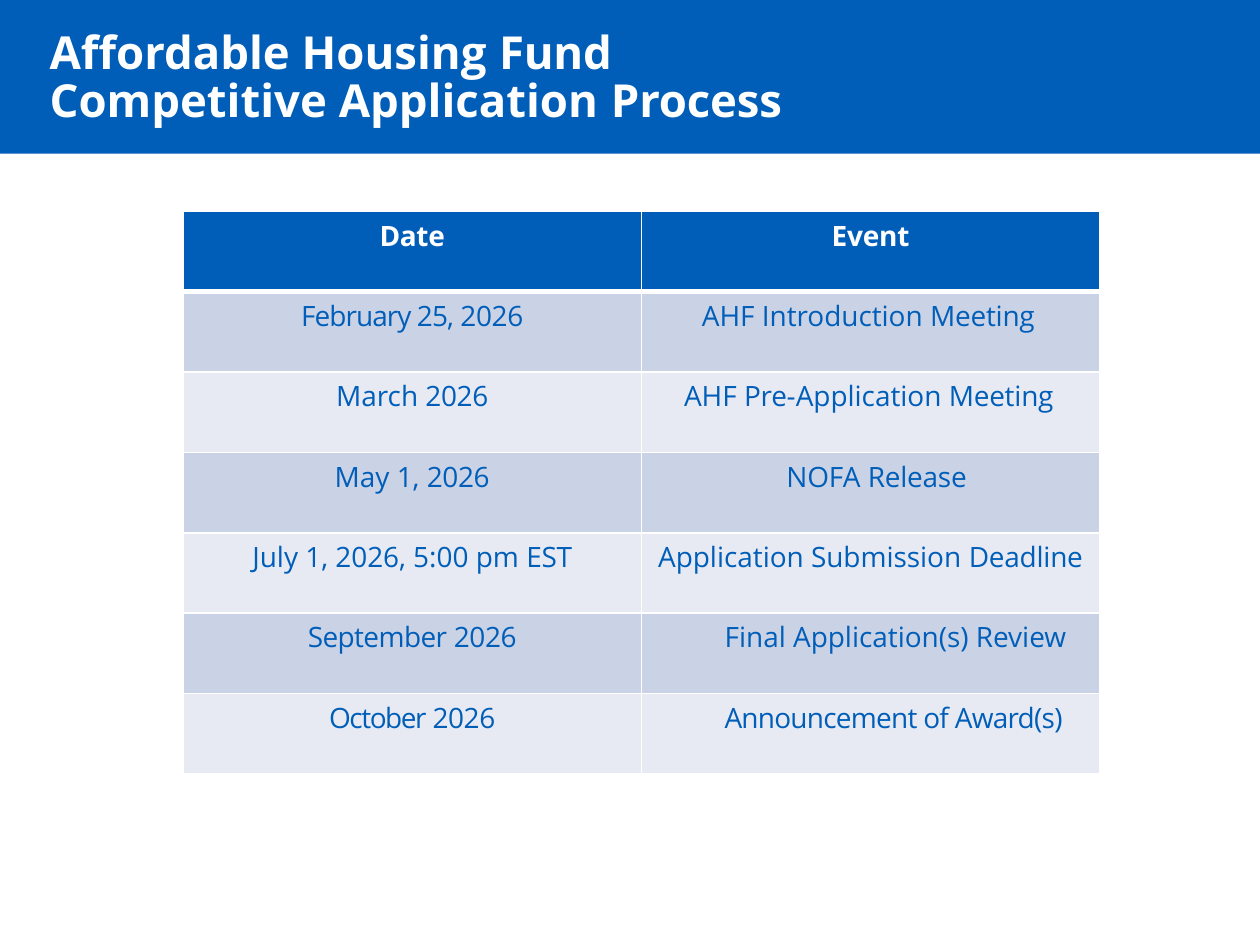
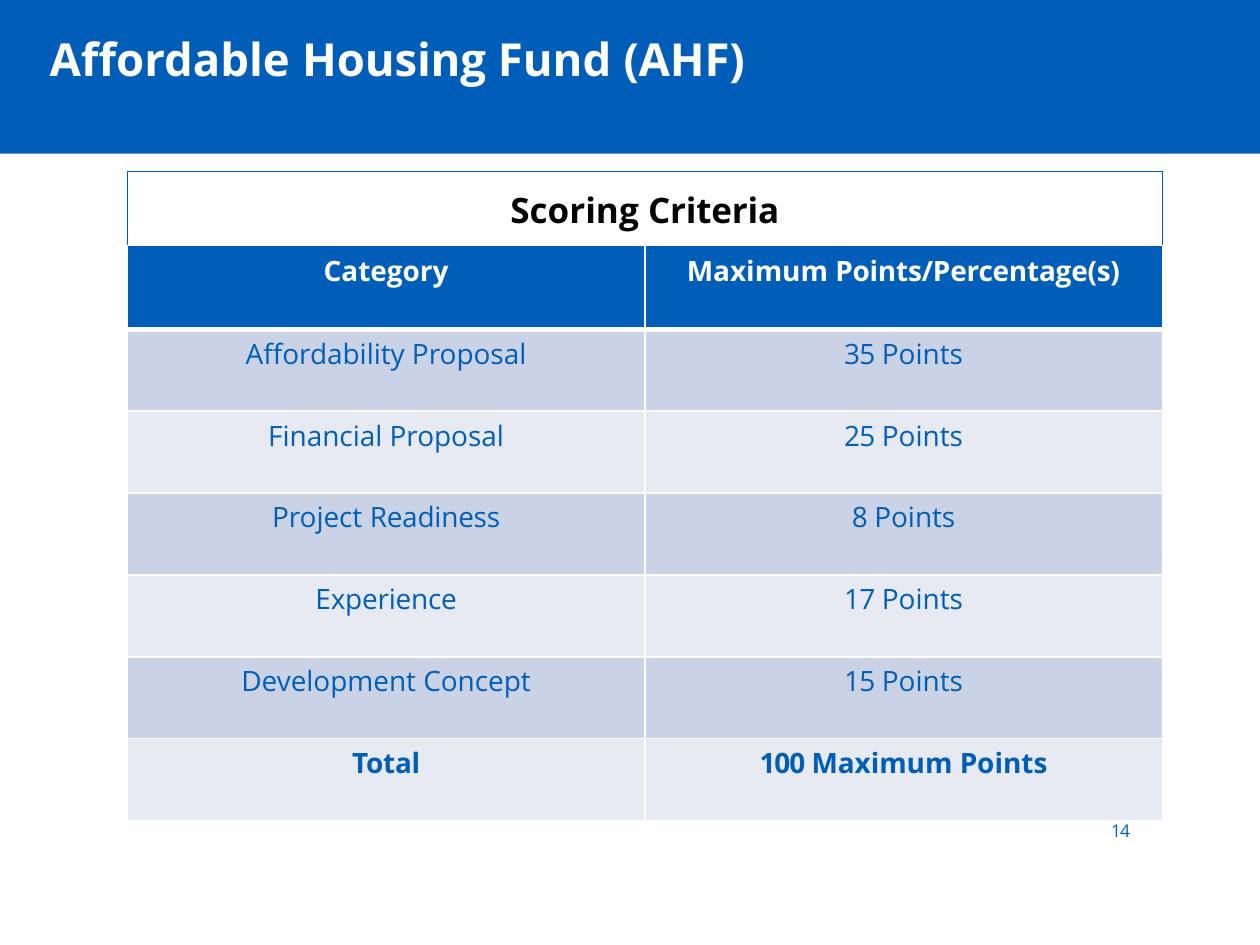
"""Build two slides on the housing fund: its timetable and its scoring table."""
from lxml import etree
from pptx import Presentation
from pptx.dml.color import RGBColor
from pptx.enum.shapes import MSO_SHAPE
from pptx.enum.text import PP_ALIGN
from pptx.oxml.ns import qn
from pptx.util import Cm, Pt

RECT = MSO_SHAPE.RECTANGLE
LEFT = PP_ALIGN.LEFT
MID = PP_ALIGN.CENTER
FONT = "Open Sans"
HUES = {"blue": "005EB8", "white": "FFFFFF", "black": "000000",
        "dark": "CAD2E6", "light": "E7EAF3"}


class Deck:
    def __init__(self):
        self.prs = Presentation()
        self.prs.slide_width = Cm(25.4)
        self.prs.slide_height = Cm(19.05)
        self.slide = None

    def start(self, title, inset):
        self.slide = self.prs.slides.add_slide(self.prs.slide_layouts[6])
        band = self.slide.shapes.add_shape(RECT, 0, 0, Cm(25.4), Cm(3.1))
        band.shadow.inherit = False
        band.fill.solid()
        band.fill.fore_color.rgb = RGBColor.from_string(HUES["blue"])
        band.line.fill.background()
        para = self.text(title, 1, 0.6, 15.2, 2.3, 26, "white", True, top=inset)
        para.line_spacing = 0.88

    def text(self, parts, x, y, w, h, size, hue, bold=False, top=0, indent=0):
        box = self.slide.shapes.add_textbox(Cm(x), Cm(y), Cm(w), Cm(h))
        frame = box.text_frame
        frame.word_wrap = True
        frame.margin_left = frame.margin_right = frame.margin_bottom = 0
        frame.margin_top = Cm(top)
        return self.words(frame, parts, size, hue, bold, LEFT, indent)

    def words(self, frame, parts, size, hue, bold, align, indent=0):
        if isinstance(parts, str):
            parts = [(parts, 0)]
        para = frame.paragraphs[0]
        para.text = parts[0][0]
        for part, _ in parts[1:]:
            para.add_run().text = part
        para.alignment = align
        if indent:
            para._p.get_or_add_pPr().set("marL", str(Cm(indent)))
        for run, (_, gap) in zip(para.runs, parts):
            run.font.name = FONT
            run.font.size = Pt(size)
            run.font.bold = bold
            run.font.color.rgb = RGBColor.from_string(HUES[hue])
            if gap:
                run._r.get_or_add_rPr().set("spc", str(round(gap * 100)))
        return para

    def edge(self, cell, side, hue="white", width=1):
        props = cell._tc.get_or_add_tcPr()
        line = etree.SubElement(props, qn("a:ln" + side), w=str(Pt(width)))
        fill = etree.SubElement(line, qn("a:solidFill"))
        etree.SubElement(fill, qn("a:srgbClr"), val=HUES[hue])

    def cell(self, cell, parts, fill, size=16, hue="blue", bold=False,
             top=0.1, indent=0, align=MID, edges=None):
        for side in "LRTB":
            self.edge(cell, side, *(edges or {}).get(side, ()))
        cell.margin_left = cell.margin_right = cell.margin_bottom = 0
        cell.margin_top = Cm(top)
        if fill:
            cell.fill.solid()
            cell.fill.fore_color.rgb = RGBColor.from_string(HUES[fill])
        else:
            cell.fill.background()
        if parts:
            self.words(cell.text_frame, parts, size, hue, bold, align, indent)

    def table(self, x, y, width, highs, head, body, cap=None, top=0.1,
              indents=(), total=False):
        grid = self.slide.shapes.add_table(
            len(highs), 2, Cm(x), Cm(y), Cm(2 * width), Cm(sum(highs))).table
        for col in grid.columns:
            col.width = Cm(width)
        for row, high in zip(grid.rows, highs):
            row.height = Cm(high)
        first = 0
        if cap:
            first = 1
            trim = {side: ("blue", 0.75) for side in "LRT"}
            for col, parts in enumerate((cap, None)):
                self.cell(grid.cell(0, col), parts, None, 20, "black", True,
                          0.3, edges=trim)
            grid.cell(0, 0).merge(grid.cell(0, 1))
        for col, parts in enumerate(head):
            self.cell(grid.cell(first, col), parts, "blue", hue="white",
                      bold=True, top=top, edges={"B": ("white", 3)})
        for num, row in enumerate(body):
            fill = "light" if num % 2 else "dark"
            bold = total and num == len(body) - 1
            edges = {} if num else {"T": ("white", 3)}
            for col, parts in enumerate(row):
                indent, align = 0, MID
                if col and indents:
                    indent, align = indents[num]
                self.cell(grid.cell(first + 1 + num, col), parts, fill,
                          bold=bold, indent=indent, align=align, edges=edges)


def dates(deck):
    deck.start([("Affordable Housing ", 0), ("Fund ", -0.2),
                ("Competitive Application ", 0), ("Process", -0.1)], 0.03)
    year = ("2026", -0.2)
    meet = ("Meeting", -0.1)
    body = [
        ([("February 25, ", -0.5), year], [("AHF Introduction ", 0), meet]),
        ([("March ", 0), year],
         [("AHF ", 0), ("Pre-", -0.1), ("Application ", 0), meet]),
        ([("May 1, ", 0), year], [("NOFA ", 0), ("Release", -0.1)]),
        ([("July 1, 2026, 5:00 pm ", 0), ("EST", -0.2)],
         [("Application Submission ", 0), ("Deadline", -0.1)]),
        ([("September ", -0.3), year], "Final Application(s) Review"),
        ([("October ", -0.8), year], [("Announcement of Award(s)", -0.4)]),
    ]
    indents = [(1.22, LEFT), (0.86, LEFT), (2.92, LEFT), (0, MID),
               (1.68, LEFT), (0.93, MID)]
    deck.table(3.69, 4.26, 9.24, [1.62] * 7,
               ([("Date", -0.2)], [("Event", -0.1)]), body, indents=indents)


def scores(deck):
    deck.start([("Affordable ", 0), ("Housing ", -0.1), ("Fund ", 0),
                ("(AHF)", -0.1)], 0.17)
    marks = [
        ("Affordability Proposal", 35),
        ("Financial Proposal", 25),
        ([("Project ", 0), ("Readiness", -0.1)], 8),
        ([("Experience", -0.1)], 17),
        ("Development Concept", 15),
    ]
    body = [(name, [(f"{mark} ", -0.4), ("Points", 0)]) for name, mark in marks]
    full = sum(mark for _, mark in marks)
    body.append(([("Total", -0.1)], [(f"{full} ", -0.6), ("Maximum Points", 0)]))
    deck.table(2.57, 3.45, 10.43, [1.5, 1.69] + [1.65] * 6,
               ("Category", [("Maximum ", 0), ("Points/Percentage(s)", -0.1)]),
               body, cap=[("Scoring ", 0), ("Criteria", -0.1)], top=0.13,
               total=True)
    deck.text([("14", -0.5)], 22.1, 16.54, 1.12, 0.43, 10, "blue", indent=0.3)


def main():
    deck = Deck()
    dates(deck)
    scores(deck)
    deck.prs.save("out.pptx")


if __name__ == "__main__":
    main()
